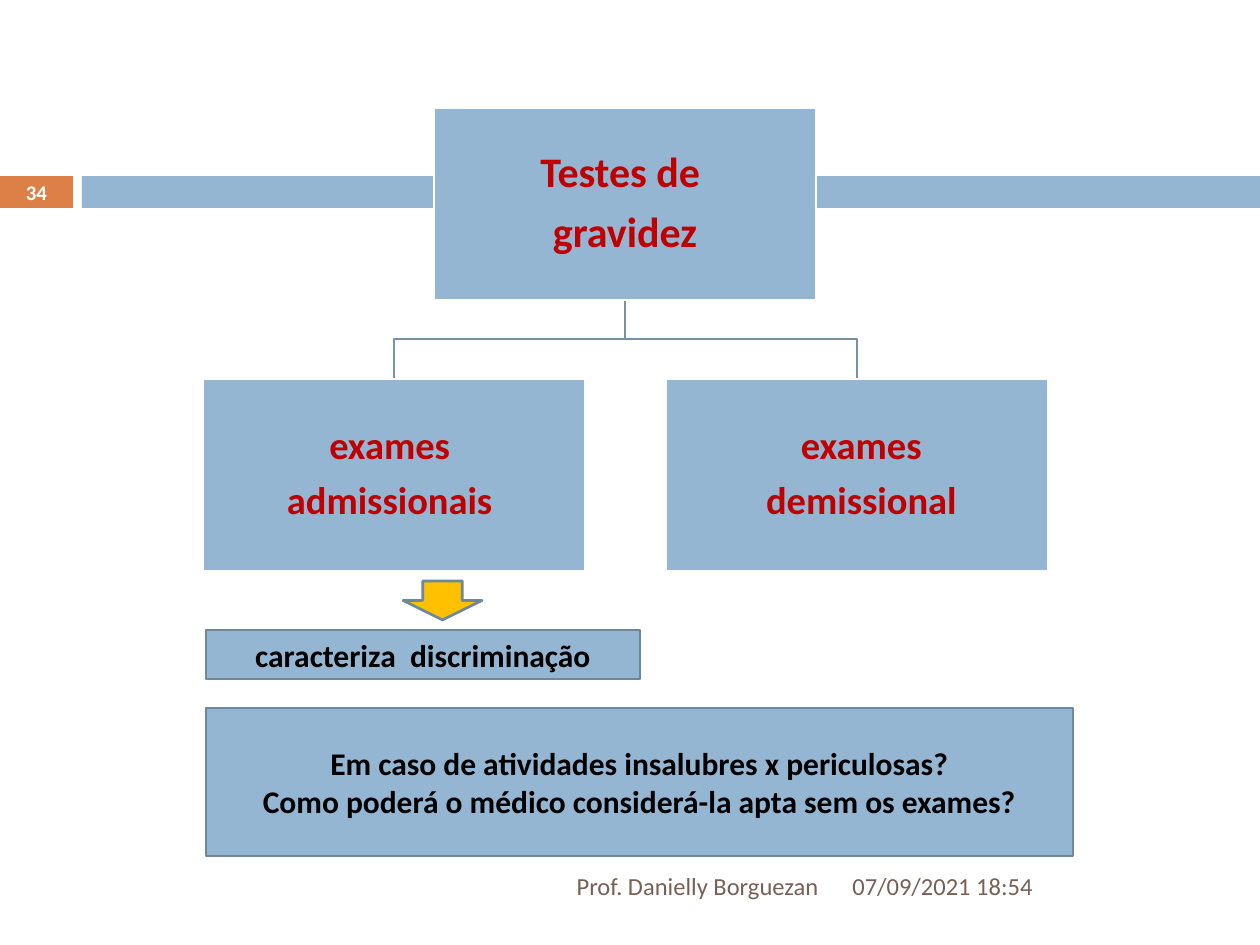
import pptx
import pptx.dml.color
import pptx.enum.shapes
import pptx.enum.text
import pptx.util

SHAPE = pptx.enum.shapes.MSO_SHAPE
ALIGN = pptx.enum.text.PP_ALIGN
EMU_PER_PX = 914400 / 126

BLUE, ORANGE, GOLD = "94B6D2", "DD8047", "FFC000"
WHITE, BLACK, RED, BROWN = "FFFFFF", "000000", "C00000", "775F55"
BRANCH, EDGE = "7792A8", "6D879B"


def px(n):
    return pptx.util.Emu(round(n * EMU_PER_PX))


def rgb(value):
    return pptx.dml.color.RGBColor.from_string(value)


class SlideBuilder:
    font = "Calibri"
    line_width = pptx.util.Pt(1.5)

    def __init__(self, slide):
        self.slide = slide

    def outline(self, sp, color):
        if color:
            sp.line.color.rgb = rgb(color)
            sp.line.width = self.line_width
        else:
            sp.line.fill.background()

    def shape(self, box, fill, line=None, kind=SHAPE.RECTANGLE):
        sp = self.slide.shapes.add_shape(kind, *map(px, box))
        sp.shadow.inherit = False
        sp.fill.solid()
        sp.fill.fore_color.rgb = rgb(fill)
        self.outline(sp, line)
        return sp

    def label(self, sp, lines, size, color, bold=True, align=ALIGN.CENTER):
        tf = sp.text_frame
        tf.word_wrap = True
        tf.vertical_anchor = pptx.enum.text.MSO_ANCHOR.MIDDLE
        tf.text = "\n".join(lines)
        for p in tf.paragraphs:
            p.alignment = align
            p.font.name = self.font
            p.font.size = pptx.util.Pt(size)
            p.font.bold = bold
            p.font.color.rgb = rgb(color)
        return tf

    def text(self, box, line, size, color, bold, align):
        sp = self.slide.shapes.add_textbox(*map(px, box))
        self.label(sp, [line], size, color, bold, align)

    def node(self, box, lines, size):
        tf = self.label(self.shape(box, BLUE, WHITE), lines, size, RED)
        tf.margin_left = tf.margin_right = px(2)
        tf.margin_top = tf.margin_bottom = px(2)
        for p in tf.paragraphs:
            p.line_spacing = 0.9
            p.space_after = pptx.util.Pt(0.35 * size)

    def branch(self, points):
        fb = self.slide.shapes.build_freeform(*points[0], scale=EMU_PER_PX)
        fb.add_line_segments(points[1:], close=False)
        sp = fb.convert_to_shape()
        sp.shadow.inherit = False
        sp.fill.background()
        self.outline(sp, BRANCH)


def main():
    prs = pptx.Presentation()
    prs.slide_width, prs.slide_height = px(1260), px(945)
    s = SlideBuilder(prs.slides.add_slide(prs.slide_layouts[6]))

    # Header band
    s.shape((0, 176, 73, 32), ORANGE)
    s.shape((82, 176, 1178, 32), BLUE)

    # Tree: root above two children
    node_w, node_h = 382, 192
    root_x, root_y, child_y = 434, 108, 379
    children = [(203, ["exames ", "admissionais "]),
                (666, [" exames", " demissional"])]
    center, bottom = root_x + node_w // 2, root_y + node_h
    middle = (bottom + child_y) // 2
    for x, _ in reversed(children):
        end = x + node_w // 2
        s.branch([(center, bottom), (center, middle), (end, middle), (end, child_y)])
    s.node((root_x, root_y, node_w, node_h), ["Testes de ", "gravidez"], 24)
    for x, lines in children:
        s.node((x, child_y, node_w, node_h), lines, 22)

    # Footer and slide number
    s.text((840, 861, 368, 50), "07/09/2021 18:54", 14, BROWN, False, ALIGN.LEFT)
    s.text((84, 861, 747, 50), "Prof. Danielly Borguezan", 14, BROWN, False, ALIGN.RIGHT)
    s.text((0, 175, 73, 34), "34", 11.9, WHITE, True, ALIGN.CENTER)

    # Consequence and question
    s.shape((403, 581, 79, 39), GOLD, EDGE, SHAPE.DOWN_ARROW)
    s.label(s.shape((206, 630, 434, 49), BLUE, EDGE),
            ["caracteriza  discriminação"], 18, BLACK)
    s.label(s.shape((206, 708, 867, 148), BLUE, EDGE),
            ["Em caso de atividades insalubres x periculosas?",
             "Como poderá o médico considerá-la apta sem os exames?"], 18, BLACK)

    prs.save("out.pptx")


if __name__ == "__main__":
    main()
